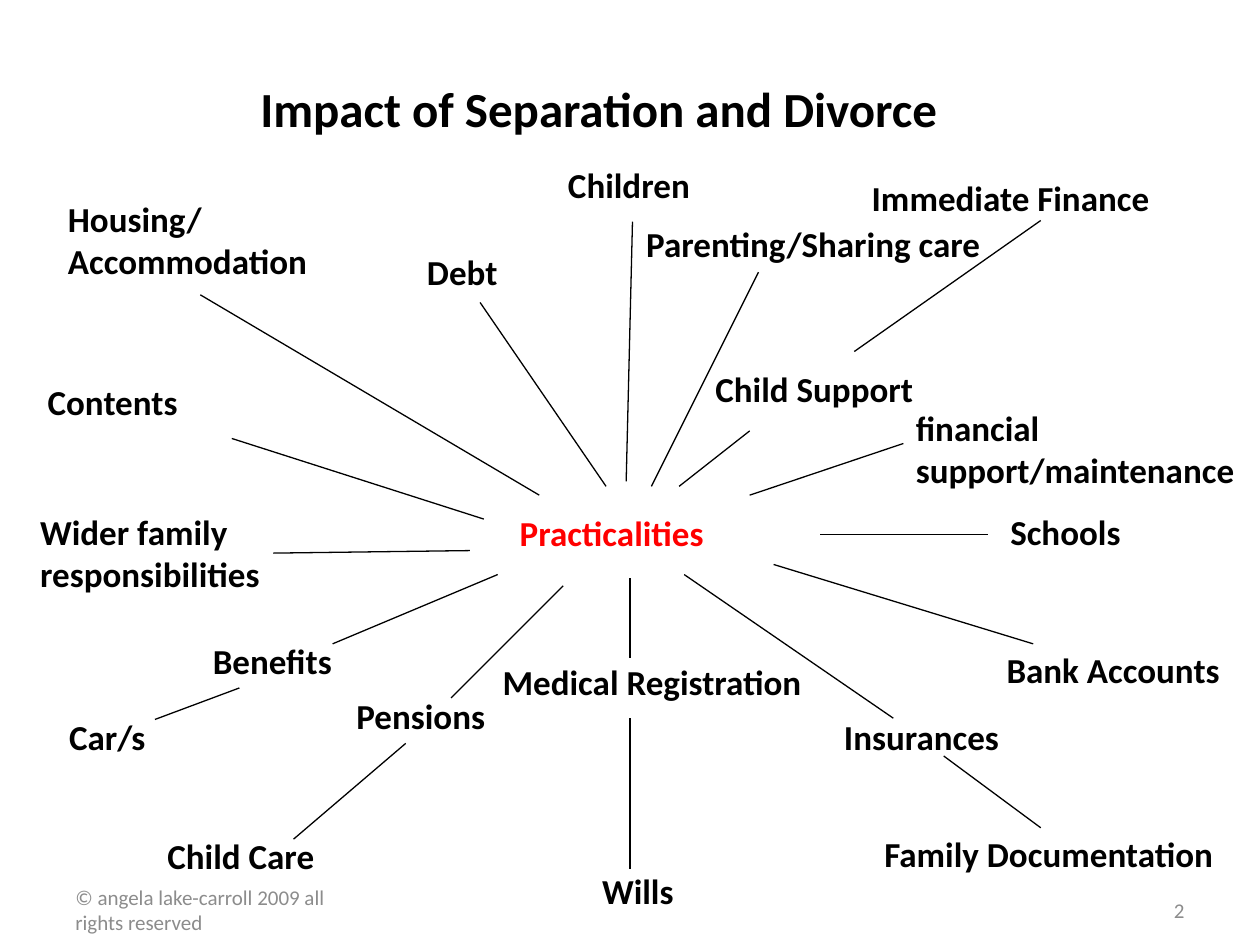
from lxml import etree
from pptx import Presentation
from pptx.dml.color import RGBColor
from pptx.enum.shapes import MSO_CONNECTOR
from pptx.enum.text import MSO_ANCHOR, PP_ALIGN
from pptx.oxml.ns import qn
from pptx.util import Inches, Pt

FONT, BLACK, RED, GREY = "Calibri", "000000", "FF0000", "8C8C8C"
ONE_LINE, TWO_LINES = 0.44, 0.77

TITLE = "Impact of Separation and Divorce"
HUB = ("Practicalities", 3.51, 4.01, 2.69)

# Topics around the hub: text, left, top, width
TOPICS = [
    ("Children", 4.41, 1.25, 2.44),
    ("Parenting/Sharing care", 5.03, 1.72, 3.43),
    ("Immediate Finance", 6.82, 1.35, 3.33),
    ("Child Support", 5.58, 2.87, 1.83),
    ("Schools", 7.92, 4, 2),
    ("Bank Accounts", 7.89, 5.1, 2.89),
    ("Insurances", 6.6, 5.63, 2.44),
    ("Family Documentation", 6.92, 6.56, 3),
    ("Medical Registration", 3.89, 5.19, 2.89),
    ("Wills", 4.68, 6.85, 1.33),
    ("Pensions", 2.73, 5.46, 2.22),
    ("Child Care", 1.23, 6.57, 2.22),
    ("Benefits", 1.59, 5.03, 2.22),
    ("Car/s", 0.45, 5.63, 1.33),
    ("Contents", 0.28, 2.97, 2),
    ("Debt", 3.29, 1.94, 1.02),
]
WRAPPED_TOPICS = [
    ("financial support/maintenance", 7.17, 3.18, 2.75),
    ("Wider family responsibilities", 0.22, 4, 2.56),
    ("Housing/ Accommodation", 0.44, 1.52, 2.92),
]

# Spokes: x and y of the start, x and y of the end
SPOKES = [
    (4.28, 3.93, 1.59, 2.34),  # Housing
    (3.81, 2.4, 4.81, 3.86),   # Debt
    (5.02, 1.76, 4.97, 3.82),  # Children
    (6.02, 2.16, 5.17, 3.86),  # Parenting
    (5.39, 3.86, 5.95, 3.42),  # Child Support
    (8.26, 1.75, 6.78, 2.79),  # Child Support to Immediate Finance
    (5.95, 3.93, 7.17, 3.52),  # Financial support
    (6.51, 4.24, 7.84, 4.24),  # Schools
    (6.14, 4.48, 8.2, 5.11),   # Bank Accounts
    (5.43, 4.56, 7.09, 5.7),   # Insurances
    (7.49, 6, 8.26, 6.57),     # Insurances to Family Documentation
    (5, 4.59, 5, 5.22),        # Medical Registration
    (5, 5.7, 5, 6.9),          # Medical Registration to Wills
    (4.47, 4.65, 3.58, 5.54),  # Pensions
    (3.22, 5.9, 2.33, 6.66),   # Pensions to Child Care
    (3.95, 4.56, 2.64, 5.11),  # Benefits
    (1.9, 5.46, 1.23, 5.71),   # Benefits to Car/s
    (3.73, 4.37, 2.17, 4.39),  # Wider family
    (1.84, 3.48, 3.84, 4.12),  # Contents
]

FOOTER = ("© angela lake-carroll 2009 all rights reserved", 0.5, 7.02, 2.33)
PAGE_NUMBER = ("2", 8.67, 7.02, 0.83)


def rgb(color):
    return RGBColor.from_string(color)


def write(sp, text, size, color=BLACK, bold=True, align=PP_ALIGN.LEFT,
          anchor=MSO_ANCHOR.TOP):
    tf = sp.text_frame
    tf.word_wrap = True
    tf.vertical_anchor = anchor
    tf.text = text
    p = tf.paragraphs[0]
    p.alignment = align
    p.font.name, p.font.size, p.font.bold = FONT, Pt(size), bold
    p.font.color.rgb = rgb(color)
    return p


def add_label(s, label, height=ONE_LINE, size=20, **style):
    text, left, top, width = label
    sp = s.shapes.add_textbox(*map(Inches, (left, top, width, height)))
    write(sp, text, size, **style)


def add_spoke(s, ends):
    line = s.shapes.add_connector(MSO_CONNECTOR.STRAIGHT, *map(Inches, ends))
    line.line.color.rgb = rgb(BLACK)
    line.line.width = Pt(0.75)
    etree.SubElement(line._element.spPr, qn("a:effectLst"))


def main():
    prs = Presentation()
    prs.slide_width, prs.slide_height = Inches(10), Inches(7.5)
    s = prs.slides.add_slide(prs.slide_layouts[5])

    # Title
    title = s.shapes.title
    title.left, title.top = Inches(1.09), Inches(0.39)
    title.width, title.height = Inches(7.32), Inches(0.76)
    p = write(title, TITLE, 28, align=PP_ALIGN.CENTER)
    p.line_spacing = 1.4

    # Hub, topics and spokes
    add_label(s, HUB, color=RED, align=PP_ALIGN.CENTER)
    for topic in TOPICS:
        add_label(s, topic)
    for topic in WRAPPED_TOPICS:
        add_label(s, topic, TWO_LINES)
    for ends in SPOKES:
        add_spoke(s, ends)

    # Footer
    small = dict(height=0.4, size=12, color=GREY, bold=False,
                 anchor=MSO_ANCHOR.MIDDLE)
    add_label(s, FOOTER, **small)
    add_label(s, PAGE_NUMBER, align=PP_ALIGN.RIGHT, **small)

    prs.save("out.pptx")


if __name__ == "__main__":
    main()
